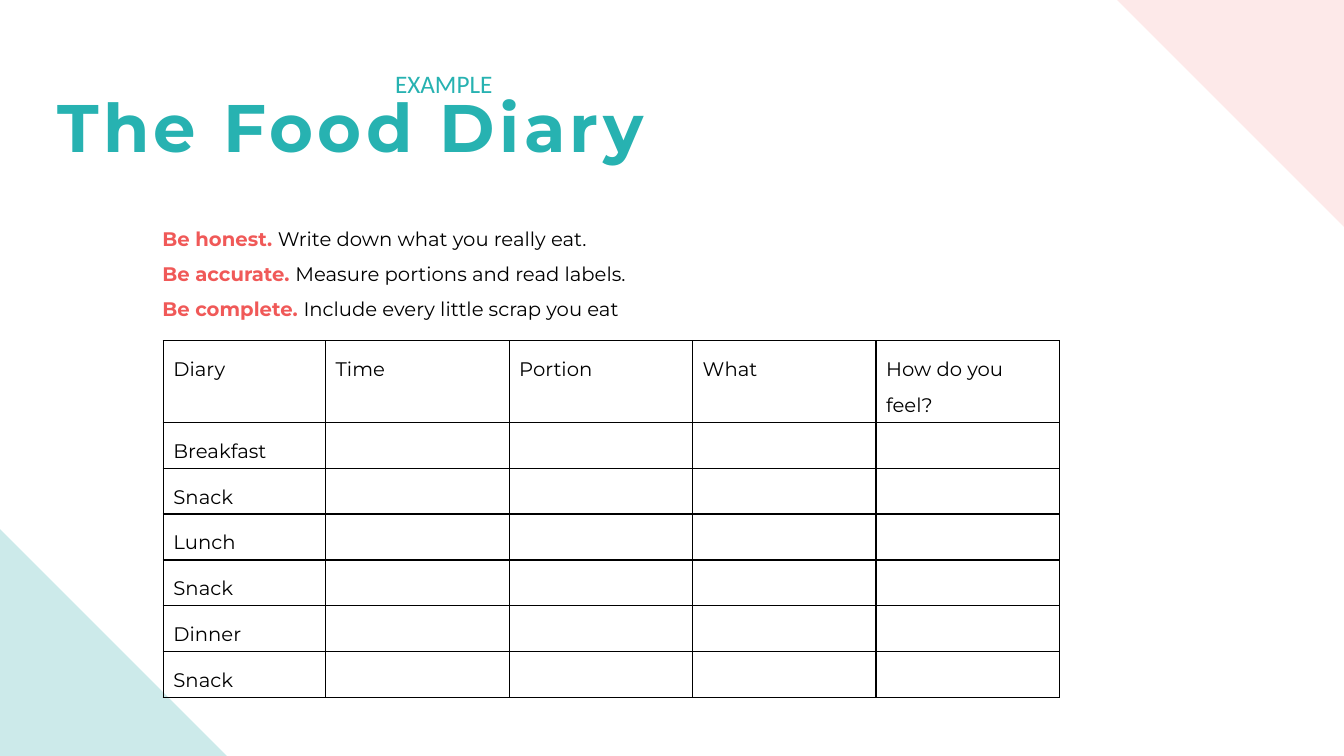
from lxml import etree
from pptx import Presentation
from pptx.dml.color import RGBColor
from pptx.enum.shapes import MSO_SHAPE
from pptx.enum.text import MSO_ANCHOR, MSO_AUTO_SIZE, PP_ALIGN
from pptx.oxml.ns import qn
from pptx.util import Inches, Pt

TRIANGLE = MSO_SHAPE.RIGHT_TRIANGLE
TOP, LEFT = MSO_ANCHOR.TOP, PP_ALIGN.LEFT
NO_AUTOFIT = MSO_AUTO_SIZE.NONE

# Content
TITLE = "The Food Diary"
LABEL = "EXAMPLE"
RULES = [
    ("Be honest. ", "Write down what you really eat."),
    ("Be accurate. ", "Measure portions and read labels."),
    ("Be complete. ", "Include every little scrap you eat"),
]
HEADERS = ["Diary", "Time", "Portion", "What", "How do you feel?"]
MEALS = ["Breakfast", "Snack", "Lunch", "Snack", "Dinner", "Snack"]

# Style and layout
TEAL, CORAL, BLACK = "27B2B1", "F05958", "000000"
PALE_TEAL, PALE_CORAL = "CCEAEA", "FDE9E9"
HEADING_FONT, LABEL_FONT = "Montserrat", "Calibri"
WIDTH, HEIGHT, CORNER = 13.33, 7.5, 2.25
FIRST_COLUMN, OTHER_COLUMN = 1.61, 1.82
HEADER_ROW, MEAL_ROW = 0.77, 0.42


def color(value):
    return RGBColor.from_string(value)


def place(shape, left, top, width, height):
    shape.left, shape.top = Inches(left), Inches(top)
    shape.width, shape.height = Inches(width), Inches(height)
    frame = shape.text_frame
    frame.word_wrap = True
    frame.auto_size = NO_AUTOFIT
    frame.vertical_anchor = TOP
    return frame


def add_run(paragraph, text, size, value, bold=False, font=HEADING_FONT):
    run = paragraph.add_run()
    run.text = text
    run.font.size, run.font.bold, run.font.name = Pt(size), bold, font
    run.font.color.rgb = color(value)
    return run


def add_corner(slide, left, top, value, rotation):
    corner = slide.shapes.add_shape(
        TRIANGLE, Inches(left), Inches(top), Inches(CORNER), Inches(CORNER))
    corner.rotation = rotation
    corner.shadow.inherit = False
    corner.fill.solid()
    corner.fill.fore_color.rgb = color(value)
    corner.line.fill.background()


def style_cell(cell):
    properties = cell._tc.get_or_add_tcPr()
    for side in ("a:lnL", "a:lnR", "a:lnT", "a:lnB"):
        line = etree.SubElement(properties, qn(side), w=str(Pt(1)))
        fill = etree.SubElement(line, qn("a:solidFill"))
        etree.SubElement(fill, qn("a:srgbClr"), val=BLACK)
    cell.fill.background()


presentation = Presentation()
presentation.slide_width = Inches(WIDTH)
presentation.slide_height = Inches(HEIGHT)
slide = presentation.slides.add_slide(presentation.slide_layouts[1])

# Corner triangles
add_corner(slide, WIDTH - CORNER, 0, PALE_CORAL, 180)
add_corner(slide, 0, HEIGHT - CORNER, PALE_TEAL, 0)

# Title
title = place(slide.shapes.title, 0.47, 0.8, 7.03, 0.91).paragraphs[0]
title.alignment = LEFT
title_run = add_run(title, TITLE, 48, TEAL, bold=True)
title_run.font._element.set("spc", "300")

# Diary table
rows, columns = len(MEALS) + 1, len(HEADERS)
table = slide.shapes.add_table(
    rows, columns, Inches(1.62), Inches(3.38),
    Inches(FIRST_COLUMN + OTHER_COLUMN * (columns - 1)),
    Inches(HEADER_ROW + MEAL_ROW * (rows - 1))).table
table.first_row = table.horz_banding = False
for index, column in enumerate(table.columns):
    column.width = Inches(OTHER_COLUMN if index else FIRST_COLUMN)
for index, row in enumerate(table.rows):
    row.height = Inches(MEAL_ROW if index else HEADER_ROW)
for cell in table.iter_cells():
    style_cell(cell)

labels = [(0, index, text) for index, text in enumerate(HEADERS)]
labels += [(index, 0, text) for index, text in enumerate(MEALS, 1)]
for row, column, text in labels:
    paragraph = table.cell(row, column).text_frame.paragraphs[0]
    paragraph.line_spacing = 1.5
    add_run(paragraph, text, 14, BLACK)

# Rules for keeping the diary
rules = place(slide.placeholders[1], 1.51, 2.08, 6.76, 1.12)
for index, (advice, detail) in enumerate(RULES):
    paragraph = rules.add_paragraph() if index else rules.paragraphs[0]
    paragraph.line_spacing = 1.5
    paragraph.space_before = Pt(0)
    properties = paragraph._p.get_or_add_pPr()
    properties.set("marL", "0")
    properties.set("indent", "0")
    etree.SubElement(properties, qn("a:buNone"))
    add_run(paragraph, advice, 14, CORAL, bold=True)
    add_run(paragraph, detail, 14, BLACK)

# Example label
label = slide.shapes.add_textbox(0, 0, 0, 0)
label_frame = place(label, 3.82, 0.63, 2.14, 0.4)
add_run(label_frame.paragraphs[0], LABEL, 18, TEAL, font=LABEL_FONT)

presentation.save("out.pptx")
